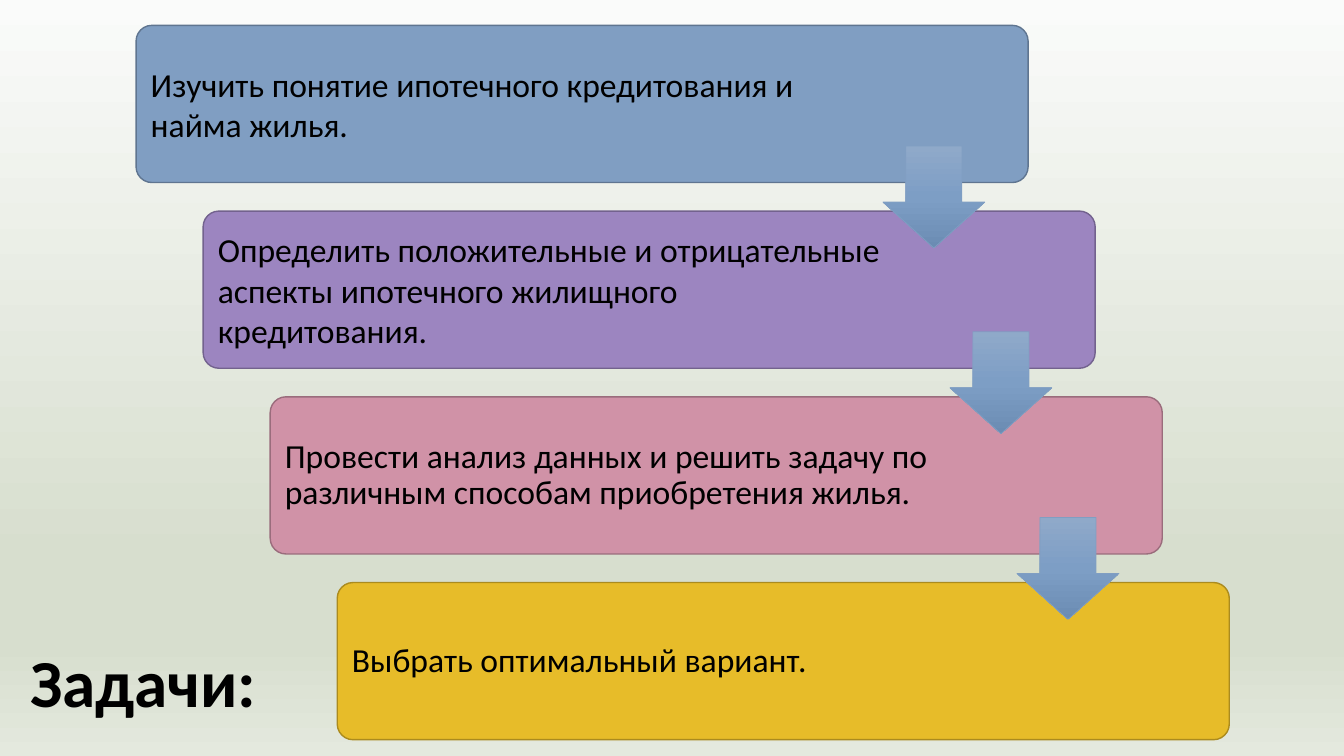
from dataclasses import dataclass

from lxml import etree
from pptx import Presentation
from pptx.dml.color import RGBColor
from pptx.enum.shapes import MSO_SHAPE
from pptx.enum.text import MSO_ANCHOR
from pptx.oxml.ns import qn
from pptx.util import Cm, Pt

ROUNDED = MSO_SHAPE.ROUNDED_RECTANGLE
DOWN_ARROW = MSO_SHAPE.DOWN_ARROW
MIDDLE = MSO_ANCHOR.MIDDLE


@dataclass(frozen=True)
class Theme:
    """Colours, font and type sizes of the slide."""
    font: str = "Calibri"
    title_size: int = 48
    body_size: int = 24
    text: str = "000000"
    arrow_line: str = "809EC2"
    backdrop: tuple = ((0, "FAFBFA"), (74, "D7DECE"), (85, "D7DECE"), (100, "E4E9DE"))
    arrow: tuple = ((0, "8FA9C9"), (50, "7D9EC5"), (100, "6B8CB3"))


THEME = Theme()
STEP_X, STEP_Y = 1.69, 4.68
TASKS = (
    ("Изучить понятие ипотечного кредитования и найма жилья.", "809EC2", "5F7590", 1.0),
    ("Определить положительные и отрицательные аспекты ипотечного жилищного кредитования.",
     "9C85C0", "73628E", 1.0),
    ("Провести анализ данных и решить задачу по различным способам приобретения жилья.",
     "D092A7", "9A6C7C", 0.9),
    ("Выбрать оптимальный вариант.", "E7BC29", "AB8B1E", 0.9),
)


def fill_gradient(fill, element, stops):
    """Fill an element from top to bottom with the given colour stops."""
    fill.gradient()
    fill.gradient_angle = 270
    stop_list = next(element.iter(qn("a:gsLst")))
    for stop in list(stop_list):
        stop_list.remove(stop)
    for percent, colour in stops:
        stop = etree.SubElement(stop_list, qn("a:gs"), pos=str(percent * 1000))
        etree.SubElement(stop, qn("a:srgbClr"), val=colour)


def add_shape(page, kind, area, adjustments, line, line_width):
    """Add an outlined preset shape without a shadow."""
    shape = page.shapes.add_shape(kind, *map(Cm, area))
    shape.shadow.inherit = False
    for index, value in enumerate(adjustments):
        shape.adjustments[index] = value
    shape.line.color.rgb = RGBColor.from_string(line)
    shape.line.width = Pt(line_width)
    return shape


def add_text(page, area, text, size, spacing, bold=False):
    """Add a wrapped, vertically centred text box."""
    frame = page.shapes.add_textbox(*map(Cm, area)).text_frame
    frame.word_wrap = True
    frame.vertical_anchor = MIDDLE
    frame.margin_top = frame.margin_bottom = Cm(0.25)
    para = frame.paragraphs[0]
    para.text = text
    para.line_spacing = spacing
    para.font.name = THEME.font
    para.font.size = Pt(size)
    para.font.bold = bold
    para.font.color.rgb = RGBColor.from_string(THEME.text)


def add_task(page, index, text, colour, line, spacing):
    """Add one card of the staircase with its text."""
    left, top = 3.43 + index * STEP_X, 0.64 + index * STEP_Y
    card = add_shape(page, ROUNDED, (left, top, 22.48, 3.96), [0.1], line, 1)
    card.fill.solid()
    card.fill.fore_color.rgb = RGBColor.from_string(colour)
    add_text(page, (left + 0.12, top + 0.12, 17.5, 3.73), text, THEME.body_size, spacing)


def add_arrow(page, index):
    """Add the arrow that leads from one card to the next."""
    area = (22.25 + index * STEP_X, 3.68 + index * STEP_Y, 2.57, 2.57)
    arrow = add_shape(page, DOWN_ARROW, area, [0.55, 0.45], THEME.arrow_line, 0.5)
    fill_gradient(arrow.fill, arrow.element, THEME.arrow)


def main():
    """Build the slide and save it."""
    deck = Presentation()
    deck.slide_width, deck.slide_height = Cm(33.87), Cm(19.05)
    page = deck.slides.add_slide(deck.slide_layouts[6])
    fill_gradient(page.background.fill, page.element, THEME.backdrop)
    add_text(page, (0.51, 15.37, 9.19, 3.81), "Задачи:", THEME.title_size, 0.9, bold=True)
    for index, task in enumerate(TASKS):
        add_task(page, index, *task)
    for index in range(len(TASKS) - 1):
        add_arrow(page, index)
    deck.save("out.pptx")


if __name__ == "__main__":
    main()
